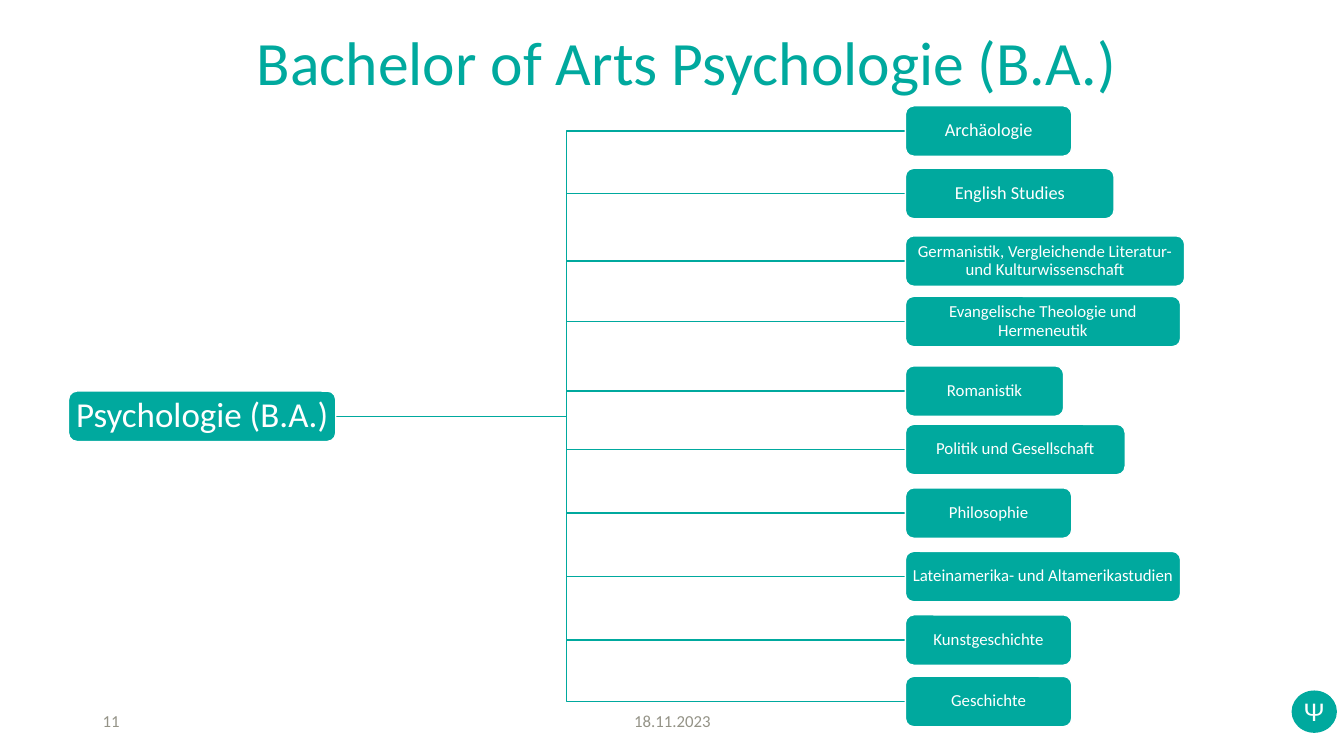
from pptx import Presentation
from pptx.dml.color import RGBColor
from pptx.enum.shapes import MSO_SHAPE
from pptx.enum.text import MSO_ANCHOR, PP_ALIGN
from pptx.util import Inches, Pt

PILL = MSO_SHAPE.FLOWCHART_ALTERNATE_PROCESS
OVAL = MSO_SHAPE.OVAL
MIDDLE = MSO_ANCHOR.MIDDLE
LEFT, CENTER = PP_ALIGN.LEFT, PP_ALIGN.CENTER

TEAL, WHITE, GRAY = "00A99E", "FFFFFF", "949387"
NODE_H = 0.5

# Label, top within the tree, width, text size
SUBJECTS = [
    ("Archäologie", 0, 1.65, 13),
    ("English Studies", 0.62, 2.07, 13),
    ("Germanistik, Vergleichende Literatur- und Kulturwissenschaft", 1.29, 2.77, 12),
    ("Evangelische Theologie und Hermeneutik", 1.89, 2.73, 12),
    ("Romanistik", 2.58, 1.57, 12),
    ("Politik und Gesellschaft", 3.16, 2.18, 12),
    ("Philosophie", 3.79, 1.65, 12),
    ("Lateinamerika- und Altamerikastudien", 4.42, 2.73, 12),
    ("Kunstgeschichte", 5.05, 1.65, 12),
    ("Geschichte", 5.66, 1.65, 12),
]


def color(code):
    return RGBColor.from_string(code)


def write(shape, text, size=12, ink=WHITE, font="Calibri", align=CENTER,
          inset=0.1, spacing=1.0):
    frame = shape.text_frame
    frame.word_wrap = True
    frame.vertical_anchor = MIDDLE
    frame.margin_left = frame.margin_right = Inches(inset)
    frame.margin_top = frame.margin_bottom = Inches(min(inset, 0.05))
    para = frame.paragraphs[0]
    para.alignment = align
    para.line_spacing = spacing
    run = para.add_run()
    run.text = text
    run.font.size = Pt(size)
    run.font.name = font
    run.font.color.rgb = color(ink)


def label(slide, box, text, **style):
    write(slide.shapes.add_textbox(*map(Inches, box)), text, **style)


def solid(slide, kind, box, edge=None):
    shape = slide.shapes.add_shape(kind, *map(Inches, box))
    shape.shadow.inherit = False
    shape.fill.solid()
    shape.fill.fore_color.rgb = color(TEAL)
    if edge:
        shape.line.color.rgb = color(edge)
        shape.line.width = Pt(1)
    else:
        shape.line.fill.background()
    return shape


def node(slide, box, text, size):
    write(solid(slide, PILL, box, WHITE), text, size=size, inset=0.01, spacing=0.9)


def branch(slide, start, end):
    """Draw an elbow that turns halfway between two points."""
    (x1, y1), (x2, y2) = start, end
    mid = (x1 + x2) / 2
    path = slide.shapes.build_freeform(Inches(x1), Inches(y1))
    points = [(mid, y1), (mid, y2), (x2, y2)]
    path.add_line_segments([(Inches(x), Inches(y)) for x, y in points], close=False)
    shape = path.convert_to_shape()
    shape.shadow.inherit = False
    shape.fill.background()
    shape.line.color.rgb = color(TEAL)
    shape.line.width = Pt(1)


def tree(slide, left, top, width, height):
    """Draw the root, its subjects and the branches between them."""
    root_w, gap = 2.65, 8.3
    middle = top + height / 2
    column = left + gap
    for _, drop, _, _ in SUBJECTS:
        branch(slide, (left + 1.58, middle), (column, top + drop + NODE_H / 2))
    node(slide, (left, middle - NODE_H / 2, root_w, NODE_H), "Psychologie (B.A.)", 25)
    for text, drop, wide, size in SUBJECTS:
        node(slide, (column, top + drop, wide, NODE_H), text, size)


def footer(slide, left, top, height):
    label(slide, (left, top, 0.91, height), "11", ink=GRAY, align=LEFT)
    label(slide, (left + 4.25, top, 3, height), "18.11.2023", ink=GRAY)
    badge = solid(slide, OVAL, (left + 11.89, top - 0.1, 0.45, 0.42))
    write(badge, "Ψ", size=18, font="Arial", inset=0)


def main():
    deck = Presentation()
    deck.slide_width, deck.slide_height = Inches(13.33), Inches(7.5)
    slide = deck.slides.add_slide(deck.slide_layouts[6])
    label(slide, (2.45, 0.28, 10.09, 0.75), "Bachelor of Arts Psychologie (B.A.)",
          size=44, ink=TEAL, align=LEFT, spacing=0.9)
    tree(slide, 0.68, 1.05, 11.07, 6.16)
    footer(slide, 0.92, 6.95, 0.4)
    deck.save("out.pptx")


if __name__ == "__main__":
    main()
